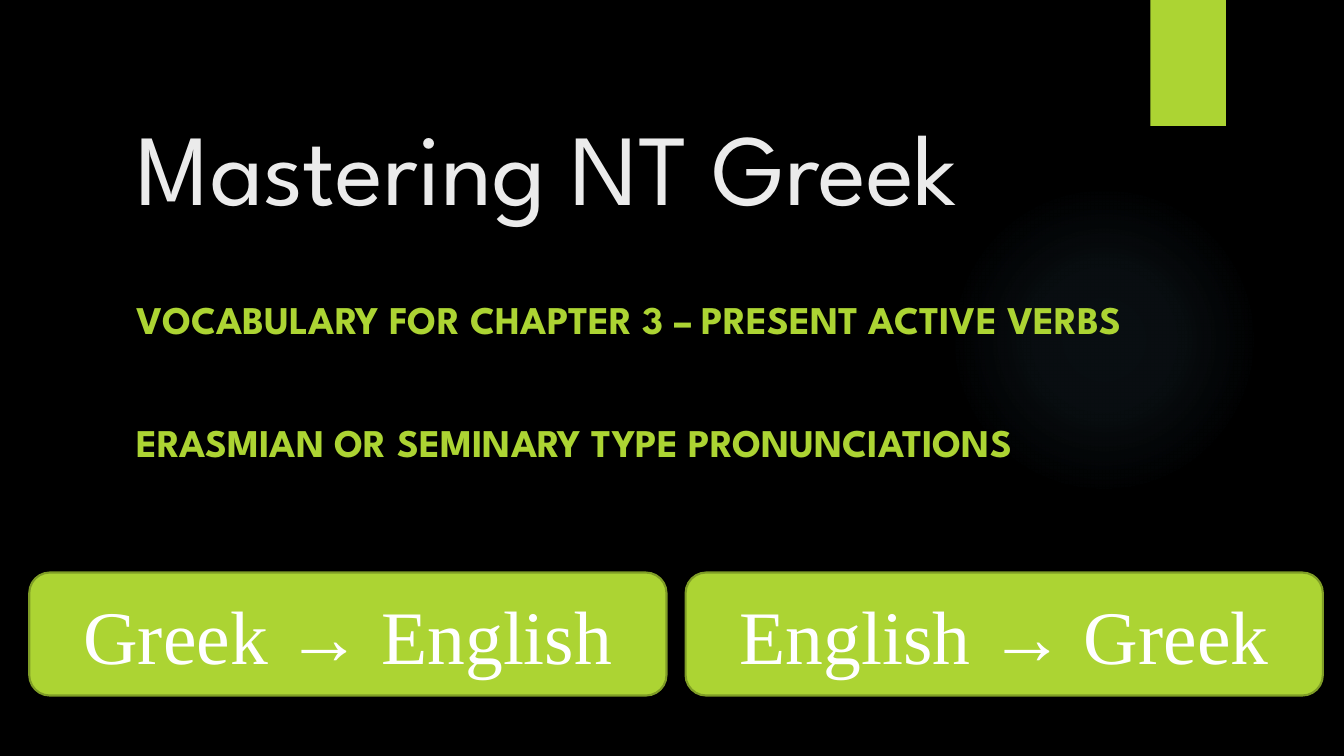
from lxml.etree import SubElement
from pptx import Presentation
from pptx.dml.color import RGBColor
from pptx.enum.shapes import MSO_SHAPE as Shape
from pptx.enum.text import MSO_ANCHOR as Anchor, PP_ALIGN as Align
from pptx.oxml.ns import qn
from pptx.util import Inches, Pt

LIME, EDGE, GLOW = "ACD433", "7F9D26", "7AC4F0"
rgb = RGBColor.from_string

deck = Presentation()
deck.slide_width, deck.slide_height = Inches(13.33), Inches(7.5)
slide = deck.slides.add_slide(deck.slide_layouts[6])
slide.background.fill.solid()
slide.background.fill.fore_color.rgb = rgb("000000")


def add_block(kind, left, top, width, height, color):
    block = slide.shapes.add_shape(kind, *map(Inches, (left, top, width, height)))
    block.shadow.inherit = False
    block.fill.solid()
    block.fill.fore_color.rgb = rgb(color)
    block.line.fill.background()
    return block


def write(shape, lines, font, size, color, bold=False, align=Align.LEFT, gap=0):
    frame = shape.text_frame
    frame.word_wrap = True
    for index, line in enumerate(lines):
        paragraph = frame.add_paragraph() if index else frame.paragraphs[0]
        paragraph.text = line
        paragraph.alignment = align
        if index:
            paragraph.space_before = Pt(gap)
        paragraph.font.name = font
        paragraph.font.size = Pt(size)
        paragraph.font.bold = bold
        paragraph.font.color.rgb = rgb(color)
    return frame


glow = add_block(Shape.OVAL, 9.41, 1.83, 3.08, 3.08, GLOW)
glow.fill.gradient()
gradient = glow._element.spPr.find(qn("a:gradFill"))
for part in list(gradient):
    gradient.remove(part)
stops = SubElement(gradient, qn("a:gsLst"))
for position, opacity in ((0, 7), (36, 6), (69, 0)):
    stop = SubElement(stops, qn("a:gs"), pos=str(position * 1000))
    tint = SubElement(stop, qn("a:srgbClr"), val=GLOW)
    SubElement(tint, qn("a:alpha"), val=str(opacity * 1000))
radial = SubElement(gradient, qn("a:path"), path="circle")
SubElement(radial, qn("a:fillToRect"), l="50000", t="50000", r="50000", b="50000")

add_block(Shape.RECTANGLE, 11.41, 0, 0.75, 1.25, LIME)

title = slide.shapes.add_textbox(*map(Inches, (1.26, 0.7, 10.04, 1.59)))
write(title, ["Mastering NT Greek"], "League Spartan", 72, "EBEBEB").vertical_anchor = Anchor.BOTTOM

subtitle = slide.shapes.add_textbox(*map(Inches, (1.26, 2.88, 11.33, 2.69)))
topics = ["VOCABULARY FOR CHAPTER 3 – PRESENT ACTIVE VERBS",
          "ERASMIAN OR SEMINARY TYPE PRONUNCIATIONS"]
write(subtitle, topics, "League Spartan", 28, LIME, bold=True, gap=54)

for column, direction in enumerate(("Greek → English", "English → Greek")):
    button = add_block(Shape.ROUNDED_RECTANGLE, 0.29 + column * 6.51, 5.68, 6.32, 1.22, LIME)
    button.line.color.rgb = rgb(EDGE)
    button.line.width = Pt(1.5)
    label = write(button, [direction], "Times New Roman", 54, "FFFFFF", align=Align.CENTER)
    label.vertical_anchor = Anchor.MIDDLE

deck.save("out.pptx")
